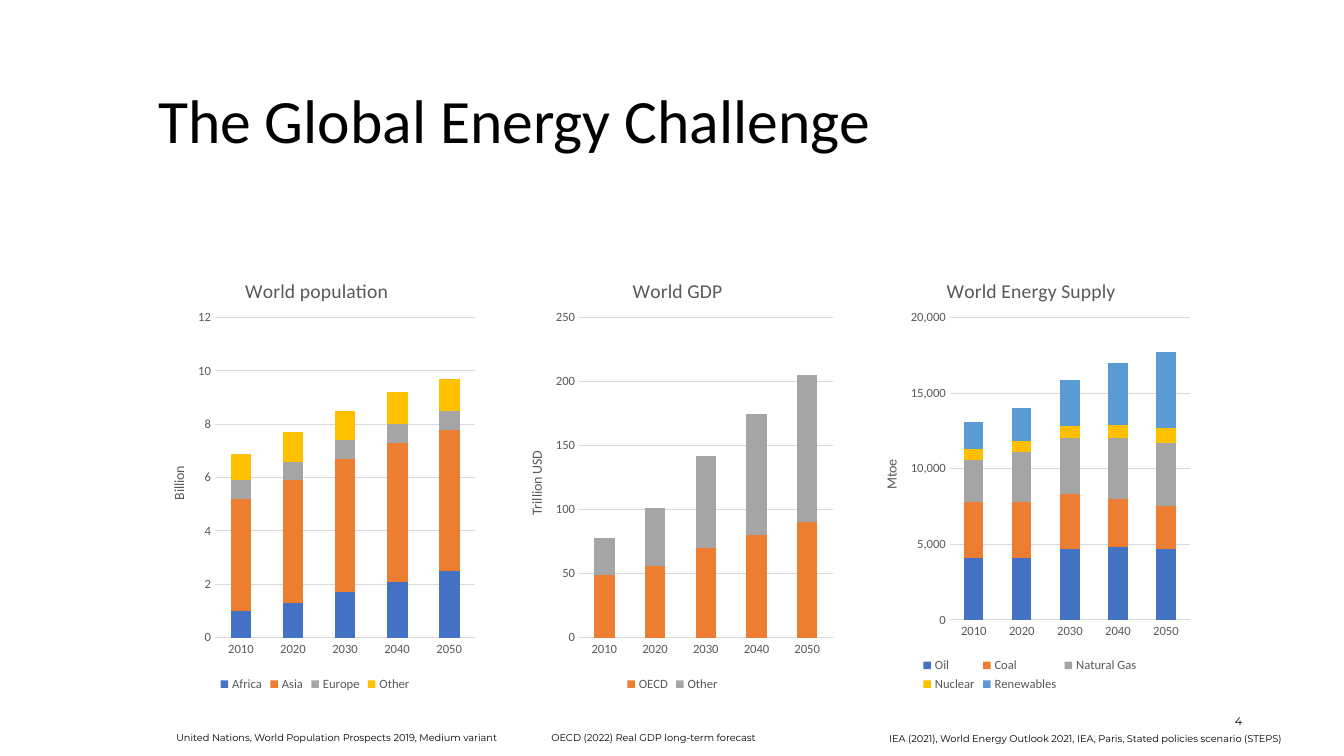
import pptx
import pptx.chart.data
import pptx.dml.color
import pptx.enum.chart
import pptx.enum.text
import pptx.util
from dataclasses import dataclass
from lxml import etree
from pptx.util import Inches


@dataclass(frozen=True)
class Theme:
    body: str = "Calibri"
    small: str = "Montserrat"
    black: str = "000000"
    label: str = "595959"
    grid: str = "D9D9D9"
    blue: str = "4472C4"
    orange: str = "ED7D31"
    gray: str = "A5A5A5"
    gold: str = "FFC000"
    sky: str = "5B9BD5"
    title: int = 44
    chart_title: int = 14
    axis_title: int = 10
    tick: int = 9
    number: int = 8
    source: int = 7


theme = Theme()
rgb = pptx.dml.color.RGBColor.from_string
ALIGN = pptx.enum.text.PP_ALIGN
ANCHOR = pptx.enum.text.MSO_ANCHOR


def style(font, size, color, name=theme.body):
    font.size = pptx.util.Pt(size)
    font.name = name
    font.bold = False
    font.color.rgb = rgb(color)


def set_layout(element, index, **parts):
    """Place a chart title or plot area by fractions; index is where its layout belongs."""
    ns = "{http://schemas.openxmlformats.org/drawingml/2006/chart}"
    for old in element.findall(ns + "layout"):
        element.remove(old)
    layout = etree.Element(ns + "layout")
    element.insert(index, layout)
    manual = etree.SubElement(layout, ns + "manualLayout")
    for tag, value in parts.items():
        etree.SubElement(manual, ns + tag).set("val", str(value))


prs = pptx.Presentation()
prs.slide_width, prs.slide_height = Inches(13.33), Inches(7.5)
slide = prs.slides.add_slide(prs.slide_layouts[6])

# Heading, slide number and sources
L, R, TOP, MIDDLE = ALIGN.LEFT, ALIGN.RIGHT, ANCHOR.TOP, ANCHOR.MIDDLE
texts = [
    ("The Global Energy Challenge", 1.47, 0.68, 10.4, 1.1, theme.title, theme.body, L, MIDDLE),
    ("4", 9.42, 6.95, 3, 0.4, theme.number, theme.small, R, MIDDLE),
    ("United Nations, World Population Prospects 2019, Medium variant",
     1.65, 7.21, 3.42, 0.22, theme.source, theme.small, L, TOP),
    ("OECD (2022) Real GDP long-term forecast",
     5.37, 7.21, 2.3, 0.22, theme.source, theme.small, L, TOP),
    ("IEA (2021), World Energy Outlook 2021, IEA, Paris, Stated policies scenario (STEPS)",
     8.72, 7.22, 4.33, 0.22, theme.source, theme.small, L, TOP),
]
for text, x, y, w, h, size, font, align, anchor in texts:
    tf = slide.shapes.add_textbox(Inches(x), Inches(y), Inches(w), Inches(h)).text_frame
    tf.text = text
    tf.word_wrap = size != theme.source
    tf.vertical_anchor = anchor
    p = tf.paragraphs[0]
    p.alignment = align
    if size == theme.title:
        p.line_spacing = 0.9
    style(p.runs[0].font, size, theme.black, font)

# Charts: title, unit, axis maximum and step, title left, plot left, width, height, series
charts = [
    ("World population", "Billion", 12, 2, 0.28, 0.2, 0.78, 0.72, [
        ("Africa", theme.blue, [1, 1.3, 1.7, 2.1, 2.5]),
        ("Asia", theme.orange, [4.2, 4.6, 5, 5.2, 5.3]),
        ("Europe", theme.gray, [0.7, 0.7, 0.7, 0.7, 0.7]),
        ("Other", theme.gold, [1, 1.1, 1.1, 1.2, 1.2])]),
    ("World GDP", "Trillion USD", 250, 50, 0.37, 0.22, 0.76, 0.72, [
        ("OECD", theme.orange, [49, 56, 70, 80, 90]),
        ("Other", theme.gray, [29, 45, 72, 95, 115])]),
    ("World Energy Supply", "Mtoe", 20000, 5000, 0.24, 0.26, 0.72, 0.68, [
        ("Oil", theme.blue, [4100, 4100, 4700, 4800, 4700]),
        ("Coal", theme.orange, [3700, 3700, 3600, 3200, 2800]),
        ("Natural Gas", theme.gray, [2800, 3300, 3700, 4000, 4200]),
        ("Nuclear", theme.gold, [700, 700, 800, 900, 1000]),
        ("Renewables", theme.sky, [1800, 2200, 3100, 4100, 5000])]),
]
for i, (title, unit, top, step, title_x, plot_x, plot_w, plot_h, series) in enumerate(charts):
    data = pptx.chart.data.CategoryChartData()
    data.categories = ["2010", "2020", "2030", "2040", "2050"]
    for name, color, values in series:
        data.add_series(name, values)
    chart = slide.shapes.add_chart(
        pptx.enum.chart.XL_CHART_TYPE.COLUMN_STACKED,
        Inches(1.47 + 3.545 * i), Inches(2.49), Inches(3.31), Inches(4.41), data).chart
    style(chart.font, theme.axis_title, theme.black)

    chart.has_title = True
    tf = chart.chart_title.text_frame
    tf.text = title
    style(tf.paragraphs[0].runs[0].font, theme.chart_title, theme.label)
    set_layout(chart.chart_title._element, 1, xMode="edge", yMode="edge", x=title_x, y=0.05)
    set_layout(chart._chartSpace.chart.plotArea, 0, layoutTarget="inner", xMode="edge",
               yMode="edge", x=plot_x, y=0.15, w=plot_w, h=plot_h)

    plot = chart.plots[0]
    plot.gap_width, plot.overlap, plot.vary_by_categories = 150, 100, False
    for s, (name, color, values) in zip(plot.series, series):
        s.format.fill.solid()
        s.format.fill.fore_color.rgb = rgb(color)

    years, amounts = chart.category_axis, chart.value_axis
    for axis in (years, amounts):
        axis.major_tick_mark = pptx.enum.chart.XL_TICK_MARK.NONE
        style(axis.tick_labels.font, theme.tick, theme.label)
    amounts.minimum_scale, amounts.maximum_scale, amounts.major_unit = 0, top, step
    amounts.tick_labels.number_format = "#,##0"
    amounts.tick_labels.number_format_is_linked = False
    amounts.format.line.fill.background()
    for line in (years.format.line, amounts.major_gridlines.format.line):
        line.color.rgb = rgb(theme.grid)
        line.width = pptx.util.Pt(0.75)
    tf = amounts.axis_title.text_frame
    tf.text = unit
    style(tf.paragraphs[0].runs[0].font, theme.axis_title, theme.label)

    chart.has_legend = True
    chart.legend.position = pptx.enum.chart.XL_LEGEND_POSITION.BOTTOM
    chart.legend.include_in_layout = False
    style(chart.legend.font, theme.tick, theme.label)

prs.save("out.pptx")
